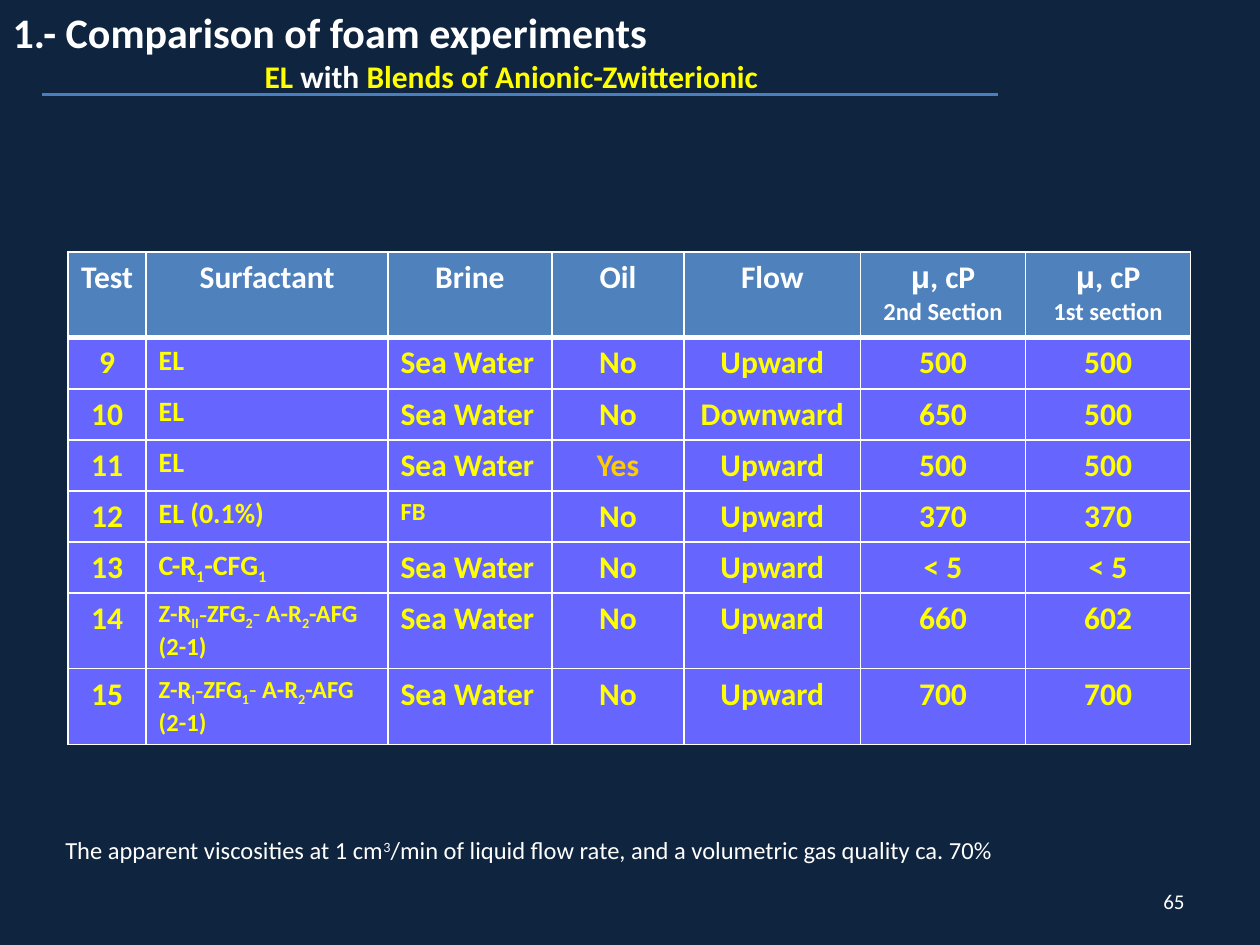
from lxml.etree import SubElement
from pptx import Presentation
from pptx.dml.color import RGBColor
from pptx.enum.shapes import MSO_CONNECTOR
from pptx.enum.text import MSO_ANCHOR, MSO_AUTO_SIZE, PP_ALIGN
from pptx.oxml.ns import qn
from pptx.util import Inches, Pt

WHITE, YELLOW, AMBER = "FFFFFF", "FFFF00", "FFCC00"
NAVY, BLUE, VIOLET, RULE = "0F243E", "4F81BD", "6666FF", "4B7EBC"
SUB, SUPER = -25, 30


def rgb(value):
    return RGBColor.from_string(value)


def add_run(p, text, size, color=WHITE, bold=False, font="Calibri", base=0):
    r = p.add_run()
    r.text = text
    r.font.size, r.font.bold, r.font.name = Pt(size), bold, font
    r.font.color.rgb = rgb(color)
    if base:
        r.font._element.set("baseline", str(base * 1000))


def set_borders(cell, top=1, bottom=1):
    tcPr = cell._tc.get_or_add_tcPr()
    for side, width in (("L", 1), ("R", 1), ("T", top), ("B", bottom)):
        ln = SubElement(tcPr, qn(f"a:ln{side}"), w=str(Pt(width)))
        fill = SubElement(ln, qn("a:solidFill"))
        SubElement(fill, qn("a:srgbClr"), val=WHITE)


def style_cell(cell, fill, **borders):
    set_borders(cell, **borders)
    cell.fill.solid()
    cell.fill.fore_color.rgb = rgb(fill)


def add_title(slide, x, y, w, h):
    sp = slide.shapes.title
    sp.left, sp.top, sp.width, sp.height = x, y, w, h
    tf = sp.text_frame
    tf.word_wrap, tf.auto_size = True, MSO_AUTO_SIZE.NONE
    tf.vertical_anchor = MSO_ANCHOR.TOP
    p, subtitle = tf.paragraphs[0], tf.add_paragraph()
    p.alignment = subtitle.alignment = PP_ALIGN.LEFT
    add_run(p, "1.- Comparison of foam experiments", 24, bold=True)
    subtitle._p.get_or_add_pPr().set("marL", str(Inches(2)))
    for text, color in (("EL", YELLOW), (" with ", WHITE),
                        ("Blends of Anionic-Zwitterionic", YELLOW)):
        add_run(subtitle, text, 18, color, True)


def add_rule(slide, x, y, w):
    line = slide.shapes.add_connector(MSO_CONNECTOR.STRAIGHT, x, y, x + w, y)
    line.line.color.rgb = rgb(RULE)
    line.line.width = Pt(2.25)
    SubElement(line._element.spPr, qn("a:effectLst"))


def blend(tail, number):
    return [("Z-R", {}), (tail, {"base": SUB}), ("-", {"font": "Times New Roman"}),
            ("ZFG", {}), (number, {"base": SUB}), ("-", {"bold": False}),
            (" A-R", {}), ("2", {"base": SUB}), ("-AFG (2-1)", {})]


def add_header(cell, text, note):
    style_cell(cell, BLUE, bottom=3)
    p = cell.text_frame.paragraphs[0]
    p.alignment = PP_ALIGN.CENTER
    if not note:
        add_run(p, text, 18, bold=True)
        return
    add_run(p, "μ", 18, bold=True, font="Arial")
    add_run(p, text, 18, bold=True)
    p = cell.text_frame.add_paragraph()
    p.alignment = PP_ALIGN.CENTER
    add_run(p, note, 14, bold=True)


def add_results_table(slide, x, y, w, h):
    headers = [("Test", ""), ("Surfactant", ""), ("Brine", ""), ("Oil", ""), ("Flow", ""),
               (", cP", "2nd Section"), (", cP", "1st section")]
    el, sea = [("EL", {})], "Sea Water"
    cfg = [("C-R", {}), ("1", {"base": SUB}), ("-CFG", {}), ("1", {"base": SUB})]
    rows = [
        ("9", el, 16, sea, "No", "Upward", "500", "500"),
        ("10", el, 16, sea, "No", "Downward", "650", "500"),
        ("11", el, 16, sea, "Yes", "Upward", "500", "500"),
        ("12", [("EL (0.1%)", {})], 16, "FB", "No", "Upward", "370", "370"),
        ("13", cfg, 16, sea, "No", "Upward", "< 5", "< 5"),
        ("14", blend("II", "2"), 14, sea, "No", "Upward", "660", "602"),
        ("15", blend("I", "1"), 14, sea, "No", "Upward", "700", "700"),
    ]
    frame = slide.shapes.add_table(len(rows) + 1, len(headers), x, y, w, h)
    table = frame.table
    for column, width in zip(table.columns, (0.62, 1.92, 1.3, 1.05, 1.4, 1.31, 1.31)):
        column.width = Inches(width)
    for i, row in enumerate(table.rows):
        row.height = Inches(0.39 if i else 0.68)
    frame.height = h

    for c, (text, note) in enumerate(headers):
        add_header(table.cell(0, c), text, note)
    for i, (test, surfactant, surfactant_size, *values) in enumerate(rows, 1):
        texts = [[(test, {})], surfactant] + [[(v, {})] for v in values]
        for c, runs in enumerate(texts):
            cell = table.cell(i, c)
            style_cell(cell, VIOLET, top=3 if i == 1 else 1)
            p = cell.text_frame.paragraphs[0]
            p.alignment = PP_ALIGN.LEFT if c in (1, 2) else PP_ALIGN.CENTER
            for text, options in runs:
                size = surfactant_size if c == 1 else 14 if text == "FB" else 18
                color = AMBER if text == "Yes" else YELLOW
                add_run(p, text, size, color, **{"bold": True, **options})


def add_text(slide, x, y, w, h, runs, size, align=PP_ALIGN.LEFT, anchor=MSO_ANCHOR.TOP):
    tf = slide.shapes.add_textbox(x, y, w, h).text_frame
    tf.word_wrap, tf.vertical_anchor = True, anchor
    p = tf.paragraphs[0]
    p.alignment = align
    for text, base in runs:
        add_run(p, text, size, base=base)


def main():
    prs = Presentation()
    prs.slide_width, prs.slide_height = Inches(10), Inches(7.5)
    slide = prs.slides.add_slide(prs.slide_layouts[5])
    slide.background.fill.solid()
    slide.background.fill.fore_color.rgb = rgb(NAVY)

    add_results_table(slide, Inches(0.54), Inches(2), Inches(8.92), Inches(3.83))
    add_title(slide, Inches(0), Inches(0), Inches(9.58), Inches(1.11))
    add_rule(slide, Inches(0.33), Inches(0.75), Inches(7.59))
    add_text(slide, Inches(7.17), Inches(6.95), Inches(2.33), Inches(0.4),
             [("65", 0)], 12, PP_ALIGN.RIGHT, MSO_ANCHOR.MIDDLE)
    add_text(slide, Inches(0.42), Inches(6.58), Inches(9.17), Inches(0.34),
             [("The apparent viscosities at 1 cm", 0), ("3", SUPER),
              ("/min of liquid flow rate, and a volumetric gas quality ca. 70%", 0)], 14)
    prs.save("out.pptx")


if __name__ == "__main__":
    main()
